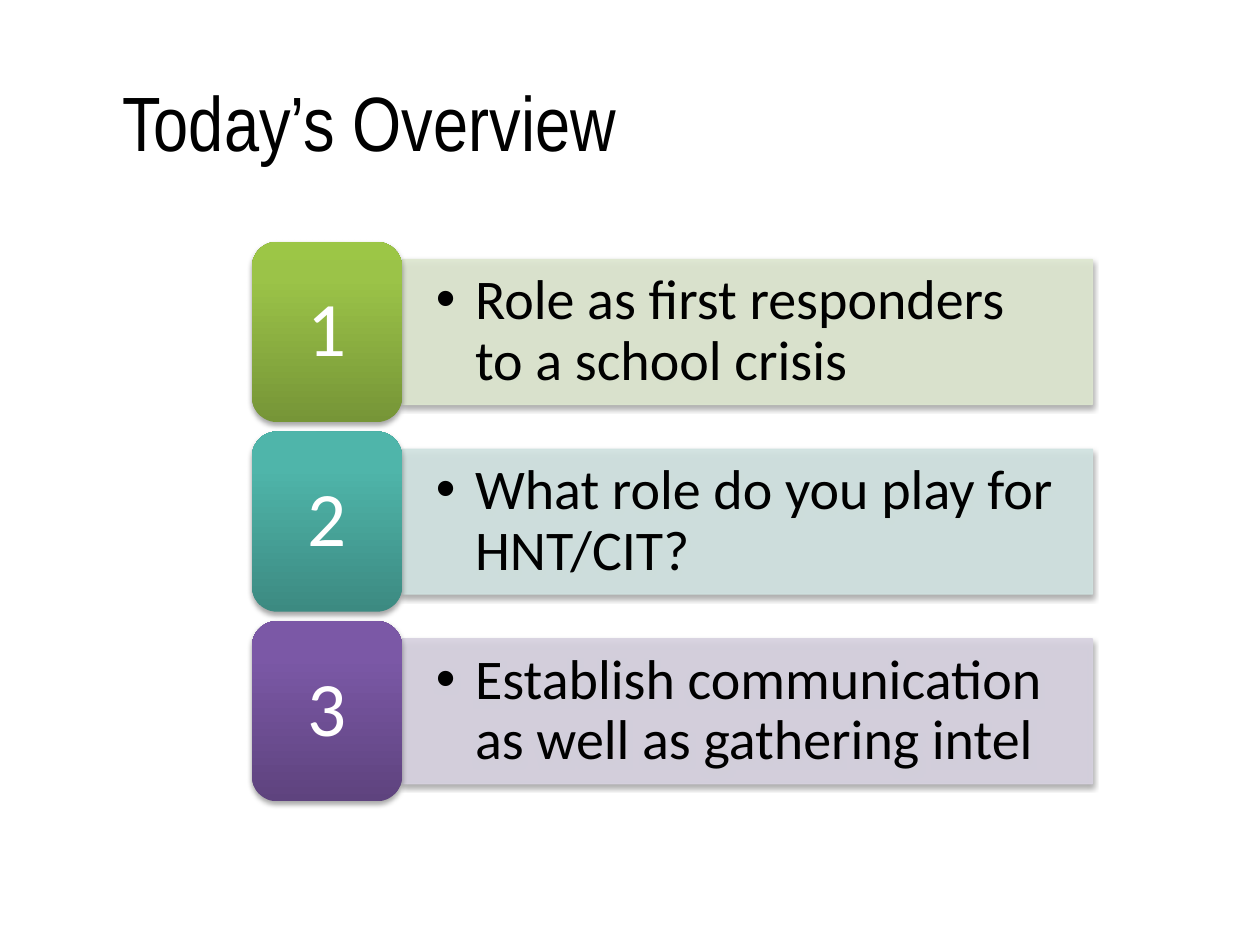
from copy import deepcopy

from lxml.etree import SubElement
from pptx import Presentation
from pptx.dml.color import RGBColor
from pptx.enum.shapes import MSO_SHAPE
from pptx.enum.text import MSO_ANCHOR, MSO_AUTO_SIZE, PP_ALIGN
from pptx.oxml.ns import qn
from pptx.util import Inches, Pt

COLORS = {"black": "000000", "white": "FFFFFF"}
TOPICS = [
    ("Role as first responders to a school crisis", "DEE7D0", ("769537", "9BC348", "9CC646")),
    ("What role do you play for HNT/CIT?", "D1E3E1", ("3C8A81", "4FB5AA", "4EB8AC")),
    ("Establish communication as well as gathering intel", "D7D2E0", ("5E437E", "7B58A6", "7B57A8")),
]
STOP_POSITIONS = (0, 0.8, 1)
FIRST_TOP, ROW_STEP = 1.92, 1.505
TILE_LEFT, TILE_WIDTH, TILE_HEIGHT = 2, 1.19, 1.43
BAR_WIDTH, BAR_HEIGHT = 5.48, 1.15


def write_text(shape, text, font="Calibri", size=32, color="black", align=PP_ALIGN.LEFT,
               inset=0.05, side_inset=0.05, spacing=None, bullet=False):
    """Write one formatted paragraph into a shape."""
    frame = shape.text_frame
    frame.word_wrap = True
    frame.auto_size = MSO_AUTO_SIZE.NONE
    frame.vertical_anchor = MSO_ANCHOR.MIDDLE
    frame.margin_top = frame.margin_bottom = Inches(inset)
    frame.margin_left = frame.margin_right = Inches(side_inset)
    para = frame.paragraphs[0]
    para.alignment = align
    para.line_spacing = spacing
    if bullet:
        properties = para._p.get_or_add_pPr()
        properties.set("marL", str(Inches(0.31)))
        properties.set("indent", str(-Inches(0.31)))
        SubElement(properties, qn("a:buFont"), typeface="Arial")
        SubElement(properties, qn("a:buChar"), char="•")
    span = para.add_run()
    span.text = text
    span.font.name = font
    span.font.size = Pt(size)
    span.font.color.rgb = RGBColor.from_string(COLORS[color])


class OverviewSlide:
    """Hold the shared style and the current slide."""

    def __init__(self, deck):
        """Add a title-only slide to the deck."""
        self.page = deck.slides.add_slide(deck.slide_layouts[5])

    def add_title(self, text):
        """Place and format the title placeholder."""
        title = self.page.shapes.title
        title.left, title.top = Inches(0.92), Inches(0.33)
        title.width, title.height = Inches(8.83), Inches(1.25)
        write_text(title, text, font="Arial Narrow", size=44)

    def add_box(self, kind, left, top, width, height):
        """Add a shape with the soft shadow of this slide."""
        box = self.page.shapes.add_shape(kind, Inches(left), Inches(top), Inches(width), Inches(height))
        box.shadow.inherit = False
        effects = box._element.spPr.find(qn("a:effectLst"))
        shadow = SubElement(effects, qn("a:outerShdw"), blurRad=str(Pt(3)), dist=str(Pt(1.8)),
                            dir="5400000", rotWithShape="0")
        tone = SubElement(shadow, qn("a:srgbClr"), val=COLORS["black"])
        SubElement(tone, qn("a:alpha"), val="35000")
        return box

    def add_bar(self, top, text, color):
        """Add a pale bar with a bulleted topic."""
        bar = self.add_box(MSO_SHAPE.RECTANGLE, TILE_LEFT + TILE_WIDTH, top, BAR_WIDTH, BAR_HEIGHT)
        bar.fill.solid()
        bar.fill.fore_color.rgb = RGBColor.from_string(color)
        bar.line.color.rgb = RGBColor.from_string(color)
        bar.line.width = Pt(0.75)
        for tone in bar._element.spPr.findall(".//" + qn("a:solidFill") + "/" + qn("a:srgbClr")):
            SubElement(tone, qn("a:alpha"), val="90000")
        write_text(bar, text, inset=0.05, side_inset=0.27, spacing=0.9, bullet=True)

    def add_tile(self, top, number, colors):
        """Add a rounded gradient tile with its number."""
        tile = self.add_box(MSO_SHAPE.ROUNDED_RECTANGLE, TILE_LEFT, top, TILE_WIDTH, TILE_HEIGHT)
        tile.line.fill.background()
        tile.fill.gradient()
        tile.fill.gradient_angle = 90
        stop_list = tile._element.spPr.find(".//" + qn("a:gsLst"))
        stop_list.append(deepcopy(stop_list[0]))
        for stop, position, color in zip(tile.fill.gradient_stops, STOP_POSITIONS, colors):
            stop.position = position
            stop.color.rgb = RGBColor.from_string(color)
        write_text(tile, str(number), size=44, color="white", align=PP_ALIGN.CENTER,
                   inset=0.09, side_inset=0.09, spacing=0.9)


def main():
    """Build and save the overview slide."""
    deck = Presentation()
    deck.slide_width, deck.slide_height = Inches(10), Inches(7.5)
    slide = OverviewSlide(deck)
    slide.add_title("Today’s Overview")
    for row, (text, bar_color, tile_colors) in enumerate(TOPICS):
        top = FIRST_TOP + row * ROW_STEP
        slide.add_bar(top + (TILE_HEIGHT - BAR_HEIGHT) / 2, text, bar_color)
        slide.add_tile(top, row + 1, tile_colors)
    deck.save("out.pptx")


if __name__ == "__main__":
    main()
